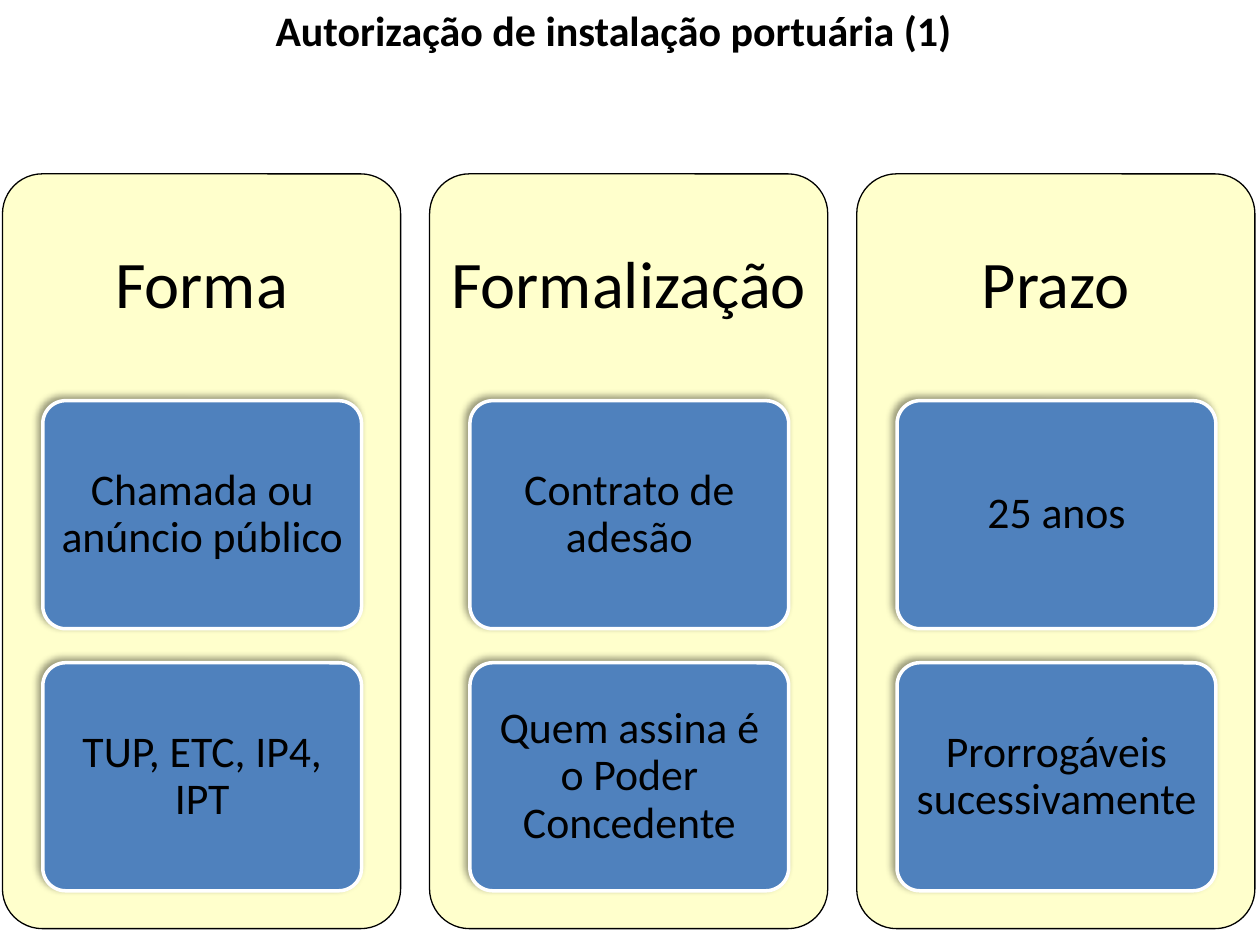
from lxml.etree import SubElement
from pptx import Presentation
from pptx.dml.color import RGBColor
from pptx.enum.shapes import MSO_SHAPE
from pptx.enum.text import MSO_ANCHOR, PP_ALIGN
from pptx.oxml.ns import qn
from pptx.util import Inches, Pt

BLACK = RGBColor(0, 0, 0)
WHITE = RGBColor(255, 255, 255)
CREAM = RGBColor(255, 255, 204)
BLUE = RGBColor(79, 129, 189)

TITLE = "Autorização de instalação portuária (1)"
COLUMNS = [
    ("Forma", ["Chamada ou anúncio público", "TUP, ETC, IP4, IPT"]),
    ("Formalização", ["Contrato de adesão", "Quem assina é o Poder Concedente"]),
    ("Prazo", ["25 anos", "Prorrogáveis sucessivamente"]),
]


def write_text(shape, text, size, bold=False, spacing=0.9, margins=(0.1, 0.05)):
    frame = shape.text_frame
    frame.word_wrap = True
    frame.vertical_anchor = MSO_ANCHOR.MIDDLE
    frame.margin_left = frame.margin_right = Inches(margins[0])
    frame.margin_top = frame.margin_bottom = Inches(margins[1])
    para = frame.paragraphs[0]
    para.alignment = PP_ALIGN.CENTER
    para.line_spacing = spacing
    span = para.add_run()
    span.text = text
    span.font.name = "Calibri"
    span.font.size = Pt(size)
    span.font.bold = bold
    span.font.color.rgb = BLACK


def add_shadow(shape):
    effects = shape._element.spPr.find(qn("a:effectLst"))
    shadow = SubElement(effects, qn("a:outerShdw"), blurRad=str(Pt(4)),
                        dist=str(Pt(3)), dir=str(225 * 60000), rotWithShape="0")
    color = SubElement(shadow, qn("a:srgbClr"), val=str(BLACK))
    SubElement(color, qn("a:alpha"), val="40000")


class PortSlide:
    """Holds the style and the current page, and draws its elements."""

    heading_size = 38
    card_size = 25
    title_size = 24

    def __init__(self, page):
        self.page = page

    def rounded(self, left, top, width, height, fill, line, weight):
        box = self.page.shapes.add_shape(
            MSO_SHAPE.ROUNDED_RECTANGLE,
            Inches(left), Inches(top), Inches(width), Inches(height))
        box.adjustments[0] = 0.1
        box.shadow.inherit = False
        box.fill.solid()
        box.fill.fore_color.rgb = fill
        box.line.color.rgb = line
        box.line.width = Pt(weight)
        return box

    def label(self, left, top, width, height, text, size, **style):
        box = self.page.shapes.add_textbox(
            Inches(left), Inches(top), Inches(width), Inches(height))
        write_text(box, text, size, **style)

    def title(self, text):
        self.label(0.37, 0.02, 9, 0.43, text, self.title_size, bold=True, spacing=1.0)

    def card(self, left, top, text):
        box = self.rounded(left, top, 2.53, 1.81, BLUE, WHITE, 2)
        add_shadow(box)
        write_text(box, text, self.card_size, margins=(0.07, 0.05))

    def column(self, left, heading, cards):
        self.rounded(left, 1.38, 3.16, 5.99, CREAM, BLACK, 0.75)
        self.label(left, 1.38, 3.16, 1.8, heading, self.heading_size, margins=(0.16, 0.16))
        for row, text in enumerate(cards):
            self.card(left + 0.32, 3.18 + row * 2.08, text)


def main():
    deck = Presentation()
    deck.slide_width, deck.slide_height = Inches(10), Inches(7.5)
    slide = PortSlide(deck.slides.add_slide(deck.slide_layouts[6]))
    for index, (heading, cards) in enumerate(COLUMNS):
        slide.column(0.02 + index * 3.39, heading, cards)
    slide.title(TITLE)
    deck.save("out.pptx")


if __name__ == "__main__":
    main()
